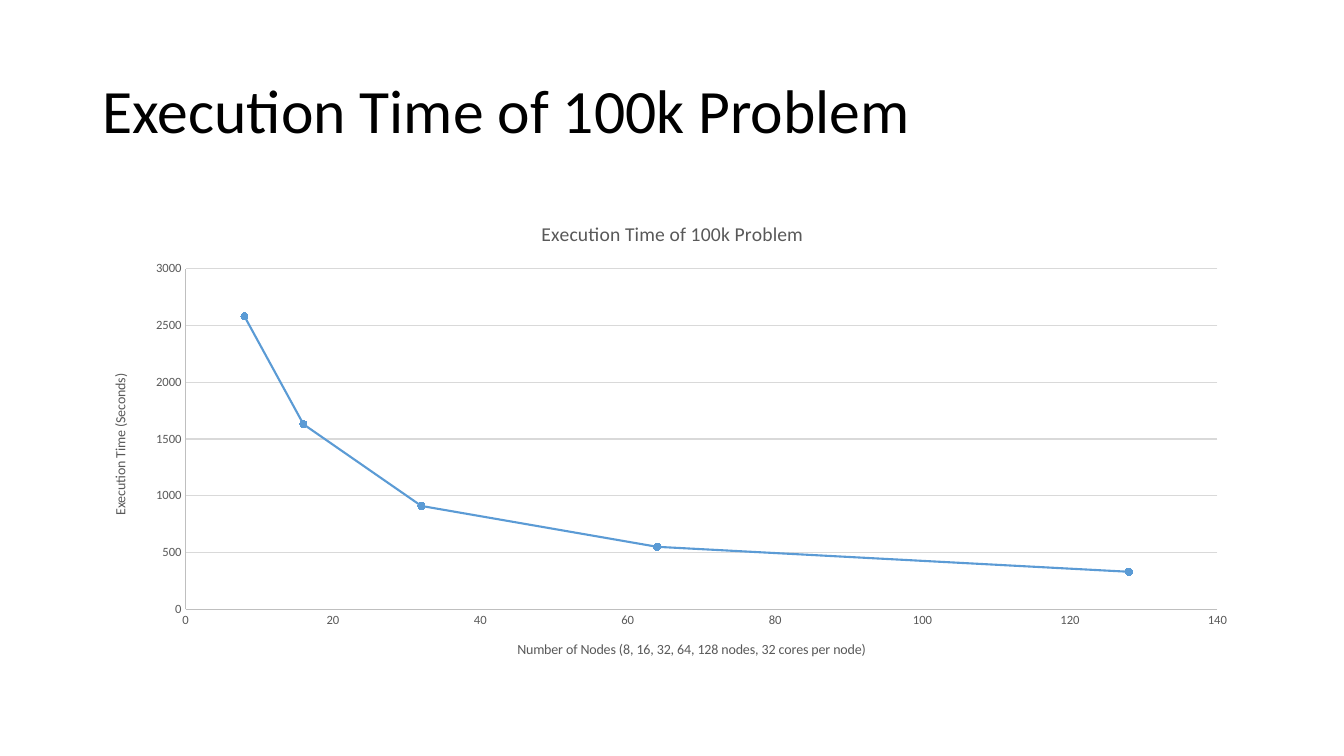
from lxml import etree
from pptx import Presentation
from pptx.chart.data import XyChartData
from pptx.dml.color import RGBColor
from pptx.enum.chart import XL_CHART_TYPE as CT, XL_MARKER_STYLE as MS, XL_TICK_MARK as TM
from pptx.enum.text import MSO_ANCHOR as ANCHOR
from pptx.oxml.ns import qn
from pptx.util import Inches, Pt

BLACK = RGBColor(0x00, 0x00, 0x00)
GREY = RGBColor(0x59, 0x59, 0x59)
AXIS_GREY = RGBColor(0xBF, 0xBF, 0xBF)
GRID_GREY = RGBColor(0xD9, 0xD9, 0xD9)
BLUE = RGBColor(0x5B, 0x9B, 0xD5)

HEADING = "Execution Time of 100k Problem"
NODES_TITLE = "Number of Nodes (8, 16, 32, 64, 128 nodes, 32 cores per node)"
TIME_TITLE = "Execution Time (Seconds)"
SECONDS_BY_NODES = {8: 2580, 16: 1630, 32: 910, 64: 550, 128: 330}
PLOT_SHARES = {"x": 0.08, "y": 0.14, "w": 0.89, "h": 0.71}


def set_font(font, size, color):
    """Give a font the slide's typeface with a size and colour."""
    formats = {"name": "Calibri", "size": Pt(size), "bold": False}
    for key, value in formats.items():
        setattr(font, key, value)
    font.color.rgb = color


def set_line(line, width, color):
    """Give a line its width and colour."""
    line.width = Pt(width)
    line.color.rgb = color


def set_chart_title(owner, text, size):
    """Title a chart or an axis."""
    tf = (owner.chart_title if hasattr(owner, "chart_title") else owner.axis_title).text_frame
    r = tf.paragraphs[0].add_run()
    r.text = text
    set_font(r.font, size, GREY)


def set_axis(axis, title, formats):
    """Format a value axis, its labels and its title."""
    for key, value in formats.items():
        setattr(axis, key, value)
    axis.major_tick_mark = axis.minor_tick_mark = TM.NONE
    set_line(axis.format.line, 0.75, AXIS_GREY)
    set_font(axis.tick_labels.font, 9, GREY)
    set_chart_title(axis, title, 10)


def place_plot(chart, shares):
    """Place the inner plot area by shares of the chart's size."""
    plot_area = chart.plots[0]._element.getparent()
    layout = plot_area.find(qn("c:layout"))
    if layout is None:
        layout = etree.Element(qn("c:layout"))
        plot_area.insert(0, layout)
    manual = etree.SubElement(layout, qn("c:manualLayout"))
    values = {"layoutTarget": "inner", "xMode": "edge", "yMode": "edge", **shares}
    for key, value in values.items():
        etree.SubElement(manual, qn(f"c:{key}")).set("val", str(value))


def add_heading(slide, box):
    """Write the slide heading in the given box."""
    tf = slide.shapes.add_textbox(*box).text_frame
    for key, value in {"word_wrap": True, "vertical_anchor": ANCHOR.MIDDLE}.items():
        setattr(tf, key, value)
    p = tf.paragraphs[0]
    p.line_spacing = 0.9
    r = p.add_run()
    r.text = HEADING
    set_font(r.font, 44, BLACK)


def add_time_chart(slide, box):
    """Draw execution time against node count in the given box."""
    data = XyChartData()
    points = data.add_series("Series 1")
    for nodes, seconds in SECONDS_BY_NODES.items():
        points.add_data_point(nodes, seconds)
    chart = slide.shapes.add_chart(CT.XY_SCATTER_LINES, *box, data).chart
    chart.has_legend = False
    set_font(chart.font, 10, BLACK)
    set_chart_title(chart, HEADING, 14)
    chart.plots[0].vary_by_categories = False
    place_plot(chart, PLOT_SHARES)

    set_axis(chart.category_axis, NODES_TITLE, {
        "minimum_scale": 0, "maximum_scale": 140, "major_unit": 20,
        "has_major_gridlines": False})
    set_axis(chart.value_axis, TIME_TITLE, {
        "minimum_scale": 0, "maximum_scale": 3000, "major_unit": 500,
        "has_major_gridlines": True})
    set_line(chart.value_axis.major_gridlines.format.line, 0.75, GRID_GREY)

    series = chart.plots[0].series[0]
    series.smooth = False
    set_line(series.format.line, 1.5, BLUE)
    marker = series.marker
    for key, value in {"style": MS.CIRCLE, "size": 5}.items():
        setattr(marker, key, value)
    marker.format.fill.solid()
    marker.format.fill.fore_color.rgb = BLUE
    set_line(marker.format.line, 0.75, BLUE)


def main():
    """Build the slide and save it."""
    prs = Presentation()
    prs.slide_width, prs.slide_height = Inches(13.33), Inches(7.5)
    slide = prs.slides.add_slide(prs.slide_layouts[6])
    left, width = Inches(0.92), Inches(11.5)
    add_heading(slide, (left, Inches(0.4), width, Inches(1.45)))
    add_time_chart(slide, (left, Inches(2), width, Inches(4.76)))
    prs.save("out.pptx")


if __name__ == "__main__":
    main()
